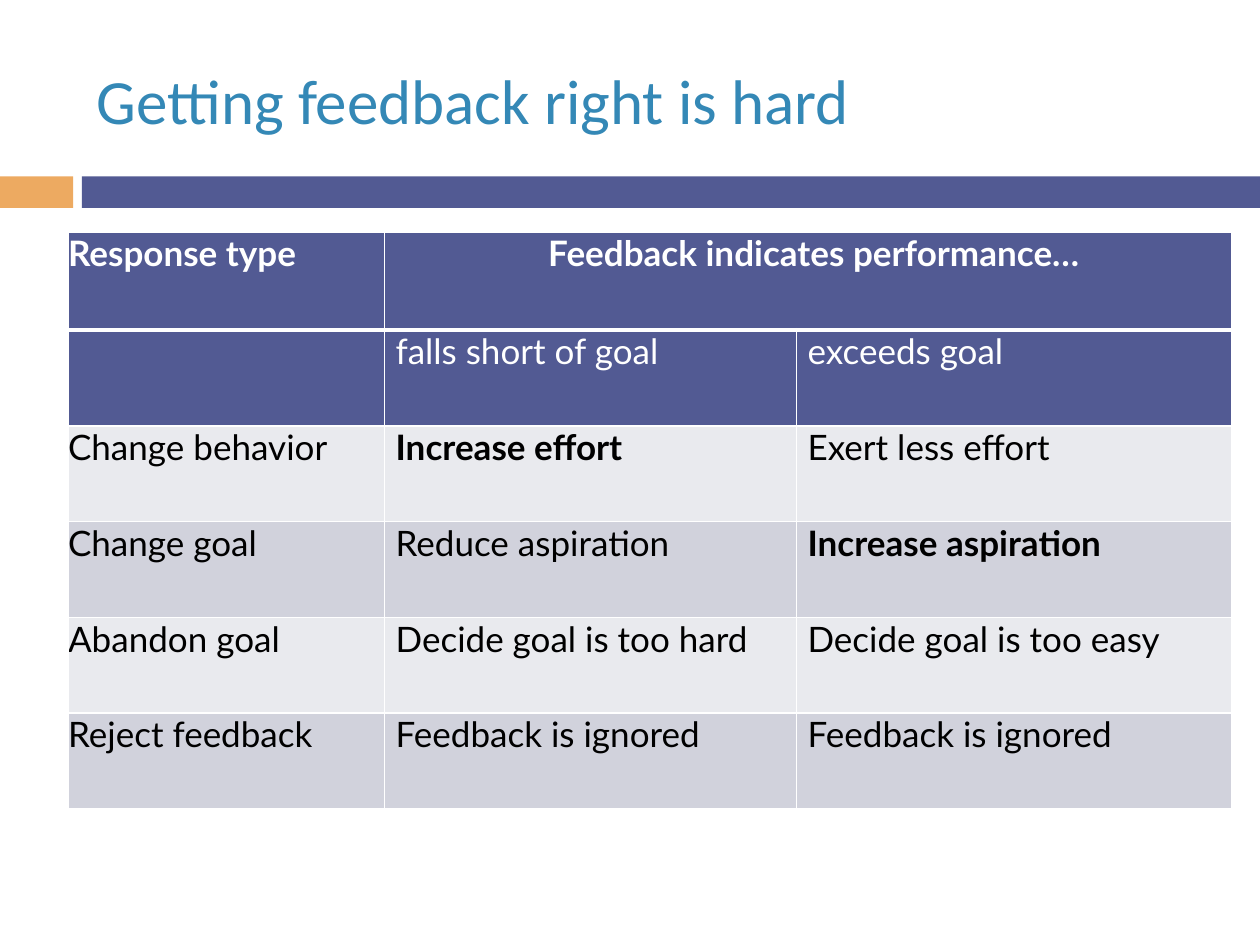
"""Build a slide with a table of responses to feedback."""
from lxml import etree
from pptx import Presentation
from pptx.dml.color import RGBColor
from pptx.enum.shapes import MSO_SHAPE
from pptx.enum.text import MSO_ANCHOR, PP_ALIGN
from pptx.oxml.ns import qn
from pptx.util import Inches, Pt

RECTANGLE = MSO_SHAPE.RECTANGLE
MIDDLE = MSO_ANCHOR.MIDDLE
LEFT, CENTER = PP_ALIGN.LEFT, PP_ALIGN.CENTER

GRID_COLUMNS, GRID_ROWS = 100, 75
COLORS = {
    "accent": "EDAA61",
    "header": "525A93",
    "title": "3488B6",
    "light": "E9EAEE",
    "dark": "D1D2DC",
    "white": "FFFFFF",
    "black": "000000",
}
COLUMN_WIDTHS = [25.1, 32.7, 34.6]
ROW_HEIGHTS = [7.8] + [7.6] * 5
RESPONSES = [
    ["Response type", "Feedback indicates performance…", ""],
    ["", "falls short of goal", "exceeds goal"],
    ["Change behavior", "Increase effort", "Exert less effort"],
    ["Change goal", "Reduce aspiration", "Increase aspiration"],
    ["Abandon goal", "Decide goal is too hard", "Decide goal is too easy"],
    ["Reject feedback", "Feedback is ignored", "Feedback is ignored"],
]
BOLD_CELLS = {(0, 0), (0, 1), (2, 1), (3, 2)}


class SlideBuilder:
    """Hold the style and the current slide, and add elements to it."""

    def __init__(self, presentation):
        self.column = presentation.slide_width / GRID_COLUMNS
        self.row = presentation.slide_height / GRID_ROWS
        self.slide = presentation.slides.add_slide(presentation.slide_layouts[6])

    def place(self, left, top, width, height):
        """Turn grid columns and rows into slide lengths."""
        units = (self.column, self.row, self.column, self.row)
        return [round(n * unit) for n, unit in zip((left, top, width, height), units)]

    def color(self, name):
        """Return the named colour."""
        return RGBColor.from_string(COLORS[name])

    def text(self, paragraph, text, color, **formats):
        """Add one formatted run."""
        run = paragraph.add_run()
        run.text = text
        for name, value in formats.items():
            setattr(run.font, name, value)
        run.font.color.rgb = self.color(color)

    def bar(self, area, color):
        """Add a plain filled bar."""
        shape = self.slide.shapes.add_shape(RECTANGLE, *self.place(*area))
        shape.shadow.inherit = False
        shape.fill.solid()
        shape.fill.fore_color.rgb = self.color(color)
        shape.line.fill.background()

    def title(self, area, text):
        """Add the slide title."""
        frame = self.slide.shapes.add_textbox(*self.place(*area)).text_frame
        for name, value in {"word_wrap": True, "vertical_anchor": MIDDLE}.items():
            setattr(frame, name, value)
        self.text(frame.paragraphs[0], text, "title", name="Calibri", size=Pt(36))

    def borders(self, cell, widths):
        """Draw white cell borders, with widths in points by side."""
        properties = cell._tc.get_or_add_tcPr()
        for index, side in enumerate("LRTB"):
            line = etree.Element(qn(f"a:ln{side}"), w=str(Pt(widths.get(side, 1))))
            fill = etree.SubElement(line, qn("a:solidFill"))
            etree.SubElement(fill, qn("a:srgbClr"), val=COLORS["white"])
            properties.insert(index, line)

    def cell(self, cell, text, fill, color, indent, alignment, bold):
        """Fill one table cell and add its text."""
        margins = {"left": indent, "right": 0, "top": 0, "bottom": 0}
        for side, value in margins.items():
            setattr(cell, f"margin_{side}", value)
        cell.fill.solid()
        cell.fill.fore_color.rgb = self.color(fill)
        paragraph = cell.text_frame.paragraphs[0]
        for name, value in {"alignment": alignment, "space_after": Pt(4)}.items():
            setattr(paragraph, name, value)
        if text:
            self.text(paragraph, text, color, name="Lato", size=Pt(20), bold=bold)

    def table(self, left, top, rows):
        """Add the table with two header rows and banded body rows."""
        area = self.place(left, top, sum(COLUMN_WIDTHS), sum(ROW_HEIGHTS))
        table = self.slide.shapes.add_table(len(rows), len(rows[0]), *area).table
        table.horz_banding = False
        for column, width in zip(table.columns, COLUMN_WIDTHS):
            column.width = round(width * self.column)
        for row, height in zip(table.rows, ROW_HEIGHTS):
            row.height = round(height * self.row)
        for r, texts in enumerate(rows):
            header = r < 2
            fill = "header" if header else ("light", "dark")[r % 2]
            color = "white" if header else "black"
            thick = {0: {"B": 3}, 1: {"T": 3}}.get(r, {})
            for c, text in enumerate(texts):
                cell = table.cell(r, c)
                indent = round(0.9 * self.column) if c else 0
                alignment = CENTER if (r, c) == (0, 1) else LEFT
                bold = (r, c) in BOLD_CELLS
                self.cell(cell, text, fill, color, indent, alignment, bold)
                self.borders(cell, thick)
        table.cell(0, 1).merge(table.cell(0, 2))


def main():
    """Build and save the presentation."""
    presentation = Presentation()
    presentation.slide_width, presentation.slide_height = Inches(10), Inches(7.5)
    builder = SlideBuilder(presentation)
    builder.bar((0, 14, 5.8, 2.5), "accent")
    builder.bar((6.5, 14, 93.5, 2.5), "header")
    builder.title((6.7, 2.5, 89.2, 10.8), "Getting feedback right is hard")
    builder.table(5.4, 18.4, RESPONSES)
    presentation.save("out.pptx")


if __name__ == "__main__":
    main()
